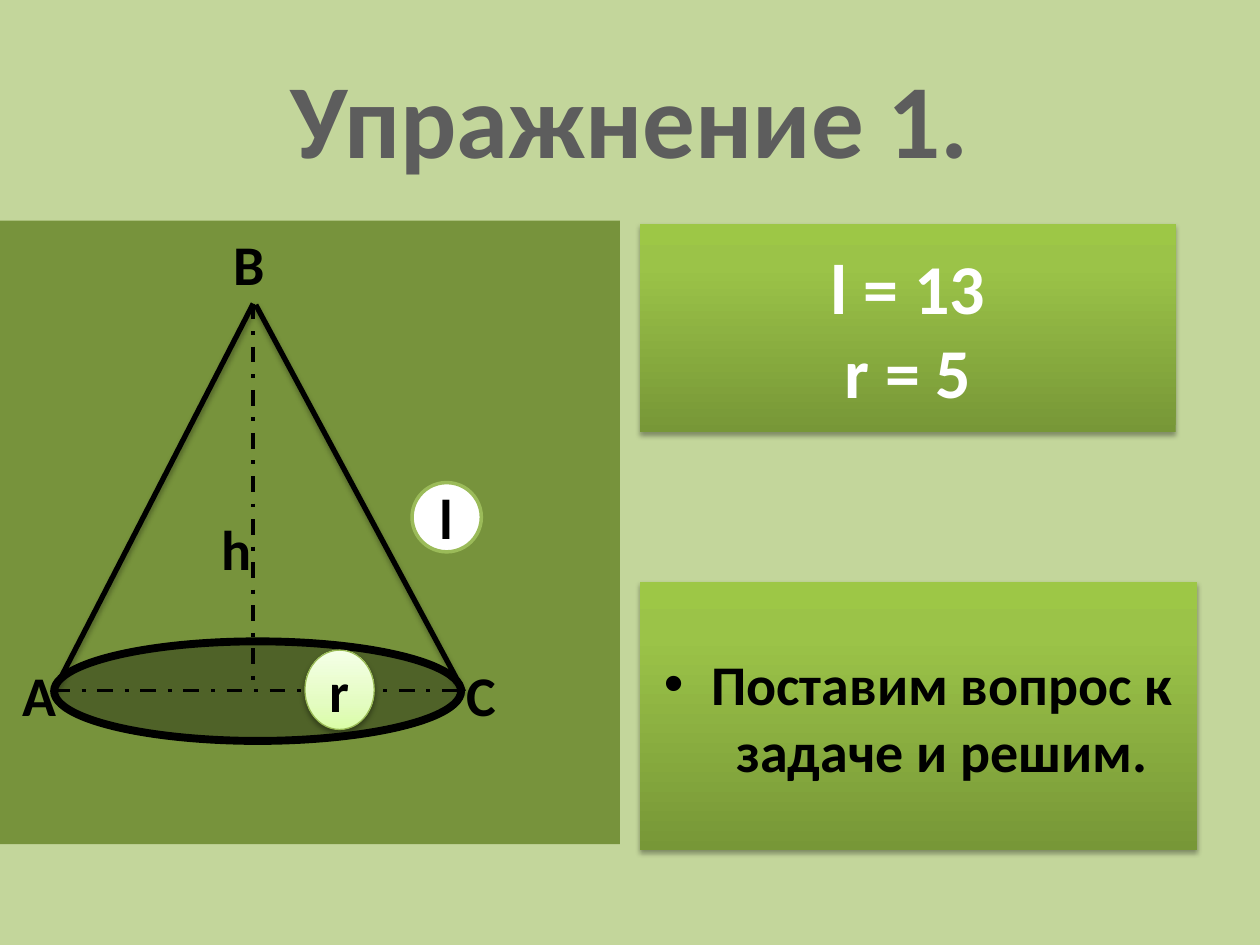
from dataclasses import dataclass

from lxml import etree
from pptx import Presentation
from pptx.dml.color import RGBColor
from pptx.enum.dml import MSO_LINE
from pptx.enum.shapes import MSO_CONNECTOR, MSO_SHAPE
from pptx.enum.text import MSO_ANCHOR, PP_ALIGN
from pptx.oxml.ns import qn
from pptx.util import Inches, Pt

RECTANGLE, OVAL = MSO_SHAPE.RECTANGLE, MSO_SHAPE.OVAL
STRAIGHT = MSO_CONNECTOR.STRAIGHT
DASH_DOT = MSO_LINE.DASH_DOT
MIDDLE = MSO_ANCHOR.MIDDLE
CENTER = PP_ALIGN.CENTER

FONT = "Calibri"
LABEL_SIZE = 32
COLORS = {
    "background": "C3D69B", "panel": "77933C", "base": "4F6228",
    "title": "5D5D5D", "ink": "000000", "white": "FFFFFF",
    "slant_ring": "9BBB59", "radius_ring": "98B955",
}
# Gradient stops run from the bottom edge to the top edge.
CARD_STOPS = [(0, "779737"), (80, "9BC348"), (100, "9DC746")]
BADGE_STOPS = [(0, "DAFDA7"), (35, "E4FCC2"), (100, "F5FFE7")]


@dataclass
class Edge:
    start: tuple[float, float]
    end: tuple[float, float]
    width: float
    dashed: bool = False


@dataclass
class VertexLabel:
    text: str
    center_x: float
    center_y: float


APEX, BASE_LEFT, BASE_RIGHT = (2.01, 2.41), (0.43, 5.48), (3.66, 5.48)
EDGES = [
    Edge(APEX, BASE_LEFT, 3),
    Edge((2.03, 2.42), (3.68, 5.49), 3),
    Edge(APEX, (APEX[0], BASE_LEFT[1]), 2.25, dashed=True),
    Edge(BASE_LEFT, BASE_RIGHT, 2.25, dashed=True),
]
LABELS = [
    VertexLabel("B", 1.98, 2.09),
    VertexLabel("h", 1.88, 4.35),
    VertexLabel("A", 0.31, 5.51),
    VertexLabel("C", 3.82, 5.51),
]


def rgb(name: str) -> RGBColor:
    return RGBColor.from_string(COLORS[name])


def place(shape, left: float, top: float, width: float, height: float) -> None:
    shape.left, shape.top = Inches(left), Inches(top)
    shape.width, shape.height = Inches(width), Inches(height)


def set_effects(shape, shadow: bool) -> None:
    """Replace the theme effects by a soft drop shadow, or by none."""
    effects = etree.SubElement(shape._element.spPr, qn("a:effectLst"))
    if shadow:
        outer = etree.SubElement(
            effects, qn("a:outerShdw"), blurRad=str(Pt(3.1)), dist=str(Pt(1.8)),
            dir="5400000", rotWithShape="0")
        color = etree.SubElement(outer, qn("a:srgbClr"), val=COLORS["ink"])
        etree.SubElement(color, qn("a:alpha"), val="35000")


def fill_gradient(shape, stops: list[tuple[int, str]]) -> None:
    shape.fill.gradient()
    shape.fill.gradient_angle = 90
    stop_list = shape._element.spPr.find(".//" + qn("a:gsLst"))
    stop_list.clear()
    for percent, color in stops:
        stop = etree.SubElement(stop_list, qn("a:gs"), pos=str(percent * 1000))
        etree.SubElement(stop, qn("a:srgbClr"), val=color)


def set_text(shape, lines: list[str], size: float, color: str) -> None:
    """Write centred bold lines in the middle of the shape."""
    frame = shape.text_frame
    frame.text = "\n".join(lines)
    frame.vertical_anchor = MIDDLE
    frame.word_wrap = True
    for paragraph in frame.paragraphs:
        paragraph.alignment = CENTER
        paragraph.space_before = Pt(0)
        font = paragraph.font
        font.name, font.size, font.bold = FONT, Pt(size), True
        font.color.rgb = rgb(color)


def clear_margins(shape) -> None:
    frame = shape.text_frame
    frame.margin_left = frame.margin_right = 0
    frame.margin_top = frame.margin_bottom = 0


def add_block(slide, kind, box: tuple[float, float, float, float],
              fill: str | list[tuple[int, str]], ring: str | None = None,
              ring_width: float = 0, shadow: bool = False):
    """Add a preset shape with a named colour or gradient stops as fill."""
    shape = slide.shapes.add_shape(kind, *map(Inches, box))
    if isinstance(fill, str):
        shape.fill.solid()
        shape.fill.fore_color.rgb = rgb(fill)
    else:
        fill_gradient(shape, fill)
    if ring:
        shape.line.color.rgb = rgb(ring)
        shape.line.width = Pt(ring_width)
    else:
        shape.line.fill.background()
    set_effects(shape, shadow)
    return shape


def add_edge(slide, edge: Edge) -> None:
    line = slide.shapes.add_connector(
        STRAIGHT, *map(Inches, (*edge.start, *edge.end)))
    line.line.color.rgb = rgb("ink")
    line.line.width = Pt(edge.width)
    if edge.dashed:
        line.line.dash_style = DASH_DOT
    set_effects(line, shadow=not edge.dashed)


def add_label(slide, label: VertexLabel) -> None:
    width, height = 0.5, 0.56
    box = slide.shapes.add_textbox(
        Inches(label.center_x - width / 2), Inches(label.center_y - height / 2),
        Inches(width), Inches(height))
    clear_margins(box)
    set_text(box, [label.text], LABEL_SIZE, "ink")


def main() -> None:
    presentation = Presentation()
    presentation.slide_width, presentation.slide_height = Inches(10), Inches(7.5)
    slide = presentation.slides.add_slide(presentation.slide_layouts[1])
    slide.background.fill.solid()
    slide.background.fill.fore_color.rgb = rgb("background")

    title, question = slide.placeholders
    place(title, 0.5, 0.3, 9, 1.25)
    set_text(title, ["Упражнение 1."], 60, "title")

    place(question, 5.08, 4.62, 4.42, 2.13)
    fill_gradient(question, CARD_STOPS)
    set_effects(question, shadow=True)
    set_text(question, ["Поставим вопрос к задаче и решим."], LABEL_SIZE, "ink")

    add_block(slide, RECTANGLE, (0, 1.75, 4.92, 4.95), "panel")
    add_block(slide, OVAL, (0.43, 5.09, 3.23, 0.79), "base", "ink", 4.5)
    for edge in EDGES:
        add_edge(slide, edge)
    for label in LABELS:
        add_label(slide, label)

    given = add_block(slide, RECTANGLE, (5.08, 1.78, 4.25, 1.65), CARD_STOPS,
                      shadow=True)
    set_text(given, ["l = 13", "r = 5"], 40, "white")

    radius = add_block(slide, OVAL, (2.42, 5.16, 0.55, 0.63), BADGE_STOPS,
                       "radius_ring", 0.75, shadow=True)
    slant = add_block(slide, OVAL, (3.27, 3.83, 0.55, 0.55), "white",
                      "slant_ring", 2)
    for badge, letter in ((radius, "r"), (slant, "l")):
        clear_margins(badge)
        set_text(badge, [letter], LABEL_SIZE, "ink")

    presentation.save("out.pptx")


if __name__ == "__main__":
    main()
